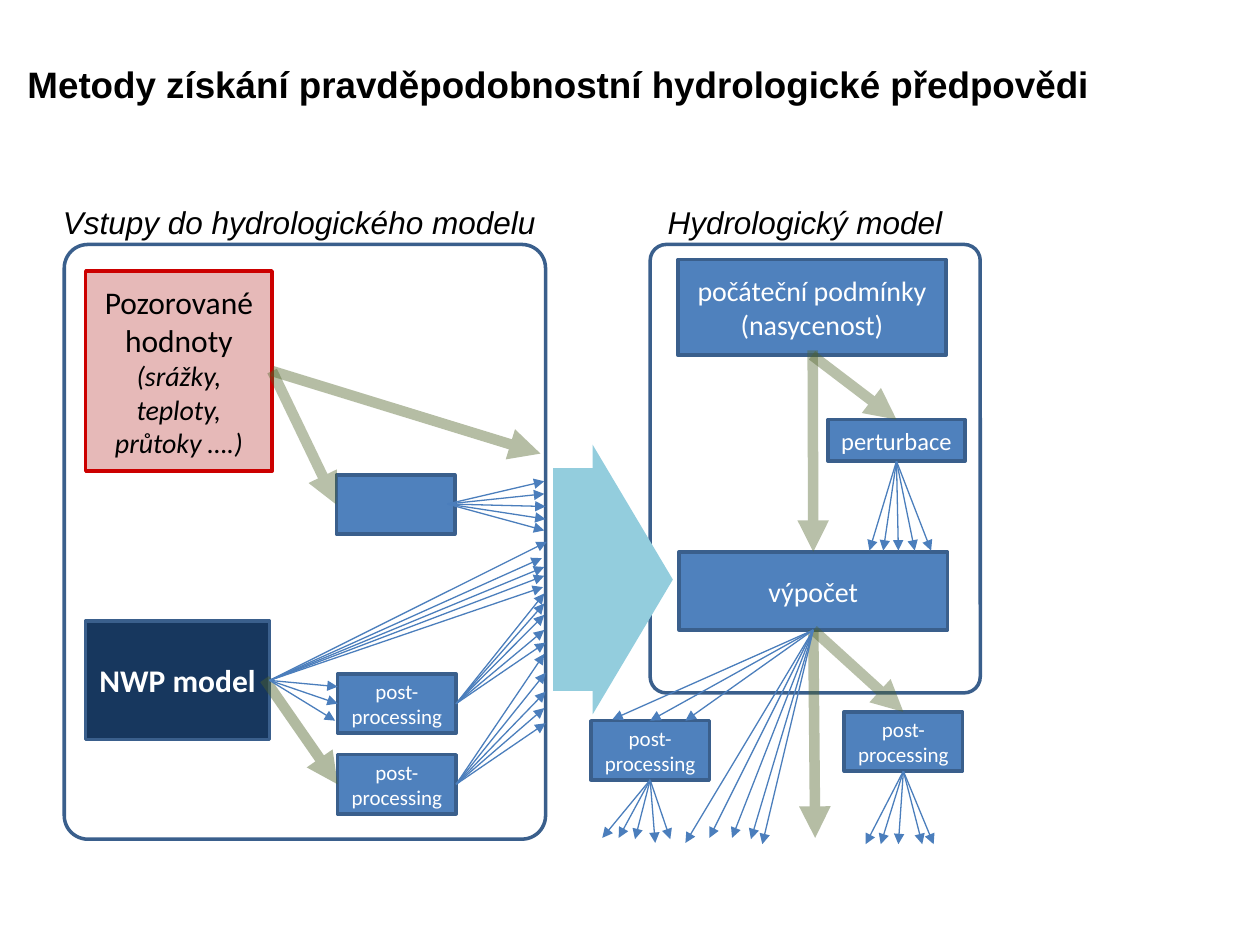
"""Build a slide on methods of obtaining a probabilistic hydrological forecast."""
import pptx
import pptx.dml.color
import pptx.enum.shapes
import pptx.enum.text
import pptx.oxml
import pptx.oxml.ns
import pptx.util

Inches = pptx.util.Inches
Shapes = pptx.enum.shapes.MSO_SHAPE

COLORS = {
    "black": "000000", "white": "FFFFFF", "border": "3A5F8C", "blue": "4F81BD",
    "navy": "17375E", "pink": "E6B9B8", "red": "CC0000", "sky": "93CDDD",
    "ray": "4B7EBC", "olive": "4F6228",
}
SIDES = {"top": 0, "left": 1, "bottom": 2, "right": 3}

HEADINGS = [
    ("Metody získání pravděpodobnostní hydrologické předpovědi", (0.12, 0.44, 9, 0.45), 21, True, False),
    ("Vstupy do hydrologického modelu", (0.4, 1.56, 3.99, 0.4), 18, False, True),
    ("Hydrologický model", (5.2, 1.56, 2.4, 0.4), 18, False, True),
]
FRAMES = [(0.51, 1.94, 3.82, 4.72), (5.16, 1.94, 2.62, 3.56)]
FLOW_ARROW = (4.39, 3.53, 0.95, 2.14)

SMALL_BOX = (0.94, 0.47)
POST_TEXT = [("post-processing", 12, False, False)]
BOXES = {
    "nwp": ((0.68, 4.93, 1.46, 0.94), "navy", "border", "white", [("NWP model", 18, True, False)]),
    "observed": ((0.68, 2.15, 1.48, 1.59), "pink", "red", "black", [
        ("Pozorované hodnoty", 18, False, False),
        ("(srážky, teploty, průtoky ….)", 16, False, True),
    ]),
    "initial": ((5.38, 2.06, 2.13, 0.76), "blue", "border", "white",
                [("počáteční podmínky (nasycenost)", 16, False, False)]),
    "calculation": ((5.39, 4.38, 2.13, 0.62), "blue", "border", "white", [("výpočet", 16, False, False)]),
    "perturbation": ((6.57, 3.33, 1.09, 0.33), "blue", "border", "white", [("perturbace", 14, False, False)]),
    "scenarios": ((2.67, 3.77, *SMALL_BOX), "blue", "border", "white", []),
}
POST_BOXES = {
    "post upper": (2.68, 5.35), "post lower": (2.68, 5.99),
    "post middle": (4.69, 5.72), "post right": (6.7, 5.65),
}
for name, corner in POST_BOXES.items():
    BOXES[name] = ((*corner, *SMALL_BOX), "blue", "border", "white", POST_TEXT)

WIDE_ARROWS = [
    ((2.1, 5.39), ("post lower", "left"), 44),
    (("observed", "right"), ("scenarios", "left"), 40),
    (("observed", "right"), (4.29, 3.6), 42),
    (("calculation", "bottom"), ("post right", "top"), 40),
    (("calculation", "bottom"), (6.47, 6.65), 41),
    ((6.45, 2.78), ("calculation", "top"), 40),
    (("initial", "bottom"), ("perturbation", "top"), 40),
]
FANS = [
    (("nwp", "right"), [(4.34, 4.3), (4.3, 4.43), (4.32, 4.5), (4.32, 4.57), (4.31, 4.66),
                        (2.68, 5.45), ("post upper", "left"), (2.66, 5.72)]),
    (("post upper", "right"), [(4.32, 4.71), (4.32, 4.79), (4.32, 4.88), (4.32, 5), (4.33, 5.1)]),
    (("post lower", "right"), [(4.32, 5.19), (4.33, 5.34), (4.33, 5.49), (4.32, 5.62), (4.33, 5.74)]),
    ((3.55, 4), [(4.32, 3.82), (4.32, 3.92), (4.33, 4.02), (4.33, 4.12), (4.32, 4.21)]),
    (("perturbation", "bottom"), [(x, 4.37) for x in (6.9, 7.01, 7.13, 7.26, 7.39)]),
    (("post right", "bottom"), [(x, 6.7) for x in (6.87, 6.99, 7.13, 7.32, 7.41)]),
    (("calculation", "bottom"), [(5.44, 6.69), (5.63, 6.65), (5.81, 6.65), (5.96, 6.66), (6.05, 6.7),
                                 (4.86, 5.71), ("post middle", "top"), (5.44, 5.72)]),
    (("post middle", "bottom"), [(4.78, 6.65), (4.91, 6.65), (5.04, 6.66), (5.2, 6.69), (5.32, 6.66)]),
]


def rgb(name):
    return pptx.dml.color.RGBColor.from_string(COLORS[name])


def add_element(parent, tag, **attributes):
    element = pptx.oxml.parse_xml(f"<a:{tag} {pptx.oxml.ns.nsdecls('a')}/>")
    for key, value in attributes.items():
        element.set(key, str(value))
    parent.append(element)


def add_run(paragraph, text, size, bold, italic, font_name, color):
    run = paragraph.add_run()
    run.text = text
    run.font.name = font_name
    run.font.size = pptx.util.Pt(size)
    run.font.bold = bold
    run.font.italic = italic
    run.font.color.rgb = rgb(color)


def add_shape(slide, kind, bounds, fill=None, line=None, adjustments=()):
    shape = slide.shapes.add_shape(kind, *map(Inches, bounds))
    shape.shadow.inherit = False
    for index, value in enumerate(adjustments):
        shape.adjustments[index] = value
    if fill:
        shape.fill.solid()
        shape.fill.fore_color.rgb = rgb(fill)
    else:
        shape.fill.background()
    if line:
        shape.line.color.rgb = rgb(line)
        shape.line.width = pptx.util.Pt(2)
    else:
        shape.line.fill.background()
    return shape


def add_box(slide, bounds, fill, line, text_color, lines):
    shape = add_shape(slide, Shapes.RECTANGLE, bounds, fill, line)
    frame = shape.text_frame
    frame.word_wrap = True
    frame.vertical_anchor = pptx.enum.text.MSO_ANCHOR.MIDDLE
    for index, (text, size, bold, italic) in enumerate(lines):
        paragraph = frame.add_paragraph() if index else frame.paragraphs[0]
        paragraph.alignment = pptx.enum.text.PP_ALIGN.CENTER
        add_run(paragraph, text, size, bold, italic, "Calibri", text_color)
    return shape


def is_joined(end):
    return isinstance(end[0], str)


def add_arrow(slide, boxes, start, end, color, width, opacity=None):
    points = [(0, 0) if is_joined(place) else place for place in (start, end)]
    connector = slide.shapes.add_connector(
        pptx.enum.shapes.MSO_CONNECTOR.STRAIGHT, *(Inches(value) for point in points for value in point))
    for place, connect in ((start, connector.begin_connect), (end, connector.end_connect)):
        if is_joined(place):
            connect(boxes[place[0]], SIDES[place[1]])
    connector.line.color.rgb = rgb(color)
    connector.line.width = pptx.util.Pt(width)
    properties = connector.element.spPr
    line = properties.find(pptx.oxml.ns.qn("a:ln"))
    if opacity:
        add_element(line.find(".//" + pptx.oxml.ns.qn("a:srgbClr")), "alpha", val=opacity * 1000)
    add_element(line, "tailEnd", type="triangle")
    add_element(properties, "effectLst")


def add_heading(slide, text, bounds, size, bold, italic):
    frame = slide.shapes.add_textbox(*map(Inches, bounds)).text_frame
    frame.word_wrap = False
    frame.auto_size = pptx.enum.text.MSO_AUTO_SIZE.SHAPE_TO_FIT_TEXT
    add_run(frame.paragraphs[0], text, size, bold, italic, "Arial", "black")


def main():
    presentation = pptx.Presentation()
    presentation.slide_width, presentation.slide_height = Inches(10), Inches(7.5)
    slide = presentation.slides.add_slide(presentation.slide_layouts[6])
    for bounds in FRAMES:
        add_shape(slide, Shapes.ROUNDED_RECTANGLE, bounds, line="border", adjustments=[0.049])
    add_shape(slide, Shapes.RIGHT_ARROW, FLOW_ARROW, fill="sky", adjustments=[0.826, 0.67])
    boxes = {name: add_box(slide, *details) for name, details in BOXES.items()}
    for start, end, opacity in WIDE_ARROWS:
        add_arrow(slide, boxes, start, end, "olive", 6, opacity)
    for start, ends in FANS:
        for end in ends:
            add_arrow(slide, boxes, start, end, "ray", 0.75)
    for heading in HEADINGS:
        add_heading(slide, *heading)
    presentation.save("out.pptx")


if __name__ == "__main__":
    main()
